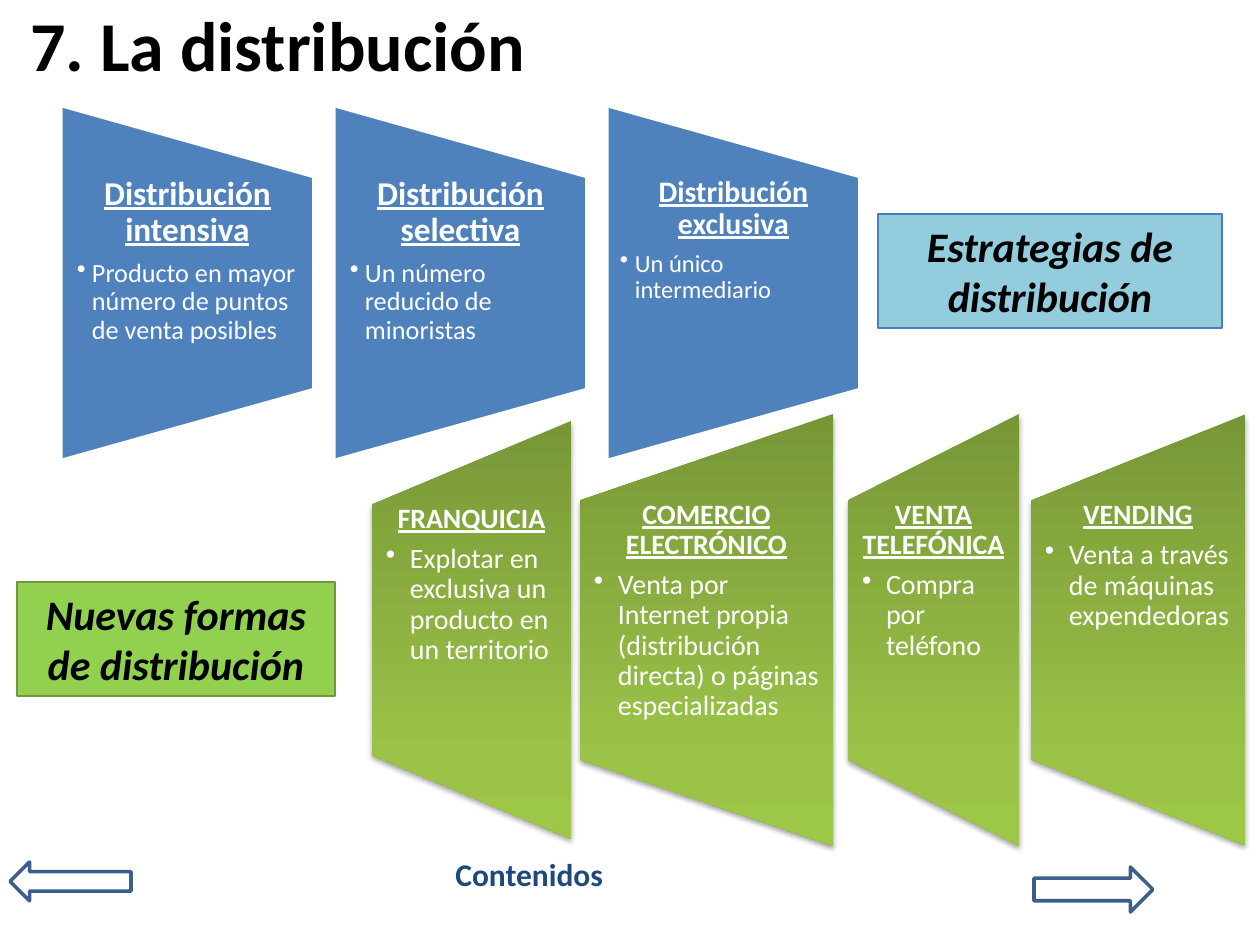
from dataclasses import dataclass

from lxml.etree import SubElement
from pptx import Presentation
from pptx.dml.color import RGBColor
from pptx.enum.shapes import MSO_SHAPE
from pptx.enum.text import MSO_ANCHOR, PP_ALIGN
from pptx.oxml import parse_xml
from pptx.oxml.ns import nsdecls, qn
from pptx.util import Emu, Pt

SCALE = 914400 / 126
FONT = "Calibri"
BLACK = RGBColor(0x00, 0x00, 0x00)
WHITE = RGBColor(0xFF, 0xFF, 0xFF)
NAVY = RGBColor(0x1F, 0x49, 0x7D)
STEEL = RGBColor(0x3A, 0x5F, 0x8C)
BLUE = RGBColor(0x4F, 0x81, 0xBD)
SKY = RGBColor(0x93, 0xCD, 0xDD)
EDGE = RGBColor(0x4B, 0x7E, 0xBC)
LIME = RGBColor(0x92, 0xD0, 0x50)
MOSS = RGBColor(0x77, 0x93, 0x3C)

GRADIENT = f"""<a:gradFill {nsdecls("a")} rotWithShape="1"><a:gsLst>
<a:gs pos="0"><a:srgbClr val="779737"/></a:gs>
<a:gs pos="80000"><a:srgbClr val="9BC348"/></a:gs>
<a:gs pos="100000"><a:srgbClr val="9DC746"/></a:gs>
</a:gsLst><a:lin ang="0" scaled="0"/></a:gradFill>"""
SHADOW = f"""<a:effectLst {nsdecls("a")}>
<a:outerShdw blurRad="39370" dist="22860" dir="5400000" rotWithShape="0">
<a:srgbClr val="000000"><a:alpha val="35000"/></a:srgbClr>
</a:outerShdw></a:effectLst>"""


@dataclass
class Box:
    left: float
    top: float
    width: float
    height: float


@dataclass
class Panel:
    left: int
    width: int
    height: int
    head: str
    body: str
    big: int = 16
    small: int = 16
    inset: int = 14


@dataclass
class Label:
    box: Box
    text: str
    fill: RGBColor
    line: RGBColor


@dataclass
class Arrow:
    box: Box
    kind: MSO_SHAPE


STEP = 273
BLUES = [
    Panel(61, 253, 355, "Distribución intensiva",
          "Producto en mayor número de puntos de venta posibles", 19, 15, 16),
    Panel(61 + STEP, 253, 355, "Distribución selectiva",
          "Un número reducido de minoristas", 19, 15, 16),
    Panel(61 + 2 * STEP, 253, 355, "Distribución exclusiva",
          "Un único intermediario", 17, 14, 13),
]
GREENS = [
    Panel(372, 199, 418, "FRANQUICIA",
          "Explotar en exclusiva un producto en un territorio"),
    Panel(580, 253, 432, "COMERCIO ELECTRÓNICO",
          "Venta por Internet propia (distribución directa) "
          "o páginas especializadas"),
    Panel(848, 171, 432, "VENTA TELEFÓNICA", "Compra por teléfono"),
    Panel(1031, 214, 431, "VENDING",
          "Venta a través de máquinas expendedoras"),
]
LABELS = [
    Label(Box(878, 214, 344, 114), "Estrategias de distribución", SKY, EDGE),
    Label(Box(17, 582, 318, 114), "Nuevas formas de distribución", LIME, MOSS),
]
ARROWS = [
    Arrow(Box(10, 862, 121, 39), MSO_SHAPE.LEFT_ARROW),
    Arrow(Box(1034, 867, 119, 45), MSO_SHAPE.RIGHT_ARROW),
]


def px(size: float) -> Emu:
    return Emu(round(size * SCALE))


def place(box: Box) -> list[Emu]:
    return [px(n) for n in (box.left, box.top, box.width, box.height)]


def style(para, size: int, color: RGBColor, bold=True, italic=None, under=None):
    font = para.font
    font.name, font.size, font.bold = FONT, Pt(size), bold
    font.italic, font.underline = italic, under
    font.color.rgb = color


def add_text(slide, box: Box, text: str, size: int, color: RGBColor):
    frame = slide.shapes.add_textbox(*place(box)).text_frame
    frame.word_wrap = True
    frame.text = text
    style(frame.paragraphs[0], size, color)
    return frame


def add_shape(slide, kind, box: Box, fill=None, line=None, weight=0.75):
    shape = slide.shapes.add_shape(kind, *place(box))
    shape.shadow.inherit = False
    if fill is None:
        shape.fill.background()
    else:
        shape.fill.solid()
        shape.fill.fore_color.rgb = fill
    if line is None:
        shape.line.fill.background()
    else:
        shape.line.color.rgb = line
        shape.line.width = Pt(weight)
    return shape


def add_bullet(frame, text: str, size: int, indent: int):
    para = frame.add_paragraph()
    para.text, para.level = text, 1
    para.line_spacing = 0.9
    para.alignment = PP_ALIGN.LEFT
    props = para._p.get_or_add_pPr()
    props.set("marL", str(px(indent)))
    props.set("indent", str(-px(indent)))
    SubElement(props, qn("a:buChar")).set("char", "•")
    style(para, size, WHITE, bold=False, under=False)


def add_panel(slide, panel: Panel, mid: int, green: bool):
    """Draw a trapezoid turned on its side, with its text in the middle 60 %."""
    side = Box(panel.left + (panel.width - panel.height) / 2,
               mid - panel.width / 2, panel.height, panel.width)
    shape = add_shape(slide, MSO_SHAPE.FLOWCHART_MANUAL_OPERATION, side,
                      BLUE, None if green else WHITE, 2)
    shape.rotation = 90 if green else 270
    if green:
        props = shape._element.spPr
        props.replace(props.find(qn("a:solidFill")), parse_xml(GRADIENT))
        props.replace(props.find(qn("a:effectLst")), parse_xml(SHADOW))

    box = Box(panel.left, mid - 0.3 * panel.height,
              panel.width, 0.6 * panel.height)
    frame = add_text(slide, box, panel.head, panel.big, WHITE)
    frame.margin_left = frame.margin_right = px(panel.inset)
    frame.margin_top = frame.margin_bottom = 0
    head = frame.paragraphs[0]
    head.alignment = PP_ALIGN.CENTER
    head.line_spacing = 0.9
    head.space_after = Pt(0.35 * panel.big)
    head.font.underline = True
    add_bullet(frame, panel.body, panel.small, 24 if green else 15)


def add_label(slide, label: Label):
    shape = add_shape(slide, MSO_SHAPE.RECTANGLE, label.box,
                      label.fill, label.line)
    frame = shape.text_frame
    frame.word_wrap = True
    frame.vertical_anchor = MSO_ANCHOR.TOP
    frame.text = label.text
    frame.paragraphs[0].alignment = PP_ALIGN.CENTER
    style(frame.paragraphs[0], 24, BLACK, italic=True)


def main():
    deck = Presentation()
    deck.slide_width, deck.slide_height = px(1260), px(945)
    slide = deck.slides.add_slide(deck.slide_layouts[6])
    title = add_text(slide, Box(18, 4, 1187, 79), "7. La distribución", 40, BLACK)
    title.vertical_anchor = MSO_ANCHOR.MIDDLE
    for panel in BLUES:
        add_panel(slide, panel, 283, False)
    for panel in GREENS:
        add_panel(slide, panel, 630, True)
    for label in LABELS:
        add_label(slide, label)
    add_text(slide, Box(443, 849, 182, 51), "Contenidos", 18, NAVY)
    for arrow in ARROWS:
        add_shape(slide, arrow.kind, arrow.box, line=STEEL, weight=2)
    deck.save("out.pptx")


if __name__ == "__main__":
    main()
